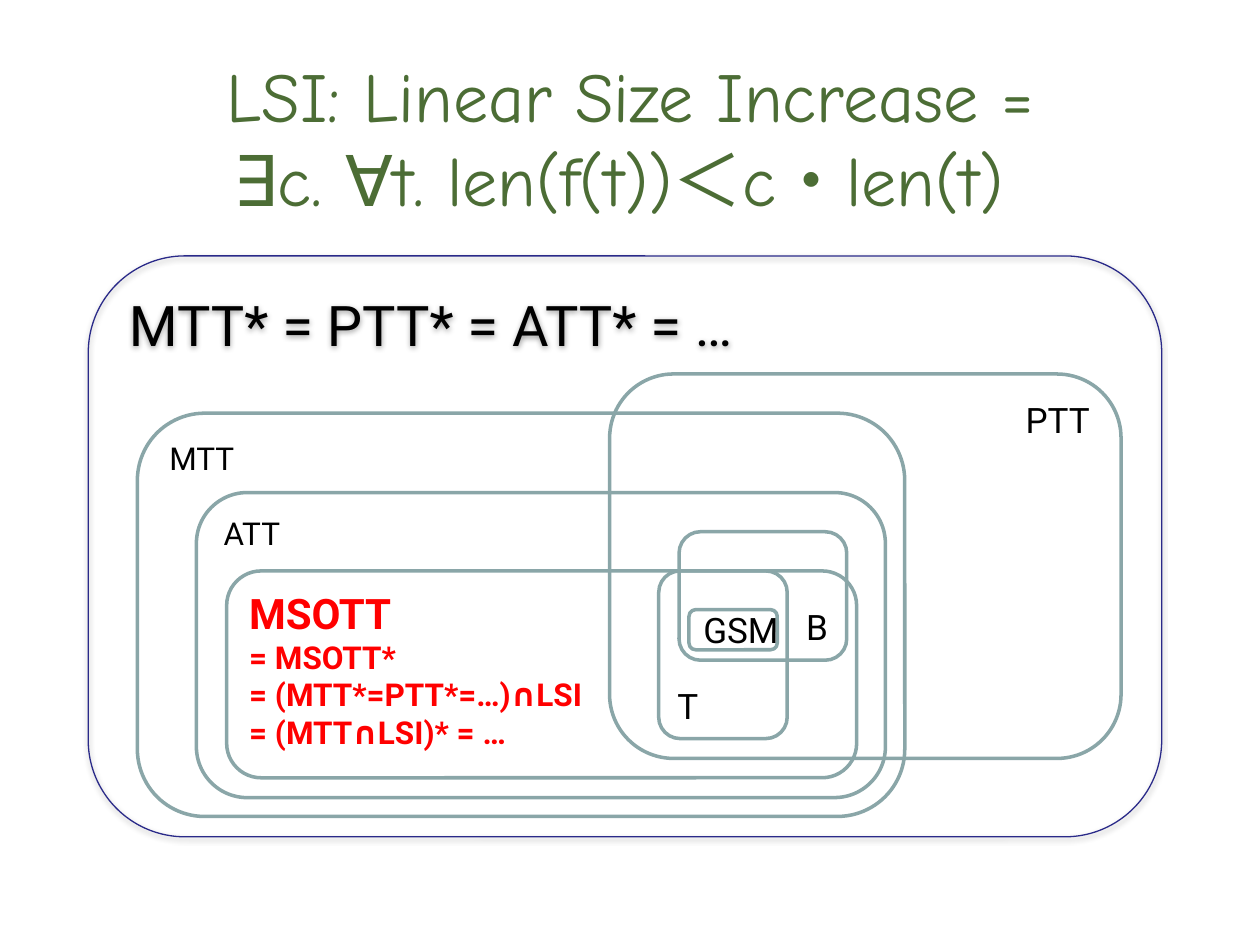
import pptx
import pptx.dml.color
import pptx.enum.shapes
import pptx.enum.text
import pptx.oxml
import pptx.oxml.ns
import pptx.util

Cm = pptx.util.Cm
Pt = pptx.util.Pt
RGBColor = pptx.dml.color.RGBColor
ANCHOR = pptx.enum.text.MSO_ANCHOR
ALIGN = pptx.enum.text.PP_ALIGN

GREEN = RGBColor(0x4C, 0x6D, 0x35)
NAVY = RGBColor(0x2A, 0x2A, 0x89)
TEAL = RGBColor(0x8A, 0xA6, 0xA8)
BLACK = RGBColor(0x00, 0x00, 0x00)
RED = RGBColor(0xFF, 0x00, 0x00)

SHADOW = (
    f'<a:outerShdw {pptx.oxml.ns.nsdecls("a")} blurRad="40000" dist="20000" '
    'dir="5400000" rotWithShape="0"><a:srgbClr val="000000">'
    '<a:alpha val="38000"/></a:srgbClr></a:outerShdw>'
)


class ClassDiagram:
    """Slide of nested sets drawn as rounded boxes."""

    title_font = "Comic Neue"
    body_font = "Roboto"

    def __init__(self, slide):
        self.s = slide

    def format(self, p, name, size, color, bold=False, align=ALIGN.LEFT):
        p.alignment = align
        p.font.name = name
        p.font.size = Pt(size)
        p.font.bold = bold
        p.font.color.rgb = color

    def title(self, text, left, top, width, height):
        sp = self.s.shapes.title
        sp.left, sp.top, sp.width, sp.height = map(Cm, (left, top, width, height))
        tf = sp.text_frame
        tf.auto_size = pptx.enum.text.MSO_AUTO_SIZE.NONE
        tf.vertical_anchor = ANCHOR.MIDDLE
        p = tf.paragraphs[0]
        p.text = text
        self.format(p, self.title_font, 40, GREEN, align=ALIGN.CENTER)

    def box(self, text, at, size, anchor=ANCHOR.TOP, align=ALIGN.LEFT,
            line=TEAL, weight=2, color=BLACK, bold=False, wrap=True):
        sp = self.s.shapes.add_shape(
            pptx.enum.shapes.MSO_SHAPE.ROUNDED_RECTANGLE, *map(Cm, at))
        sp.shadow.inherit = False
        sp.fill.background()
        sp.line.color.rgb = line
        sp.line.width = Pt(weight)
        tf = sp.text_frame
        tf.word_wrap = wrap
        tf.vertical_anchor = anchor
        p = tf.paragraphs[0]
        p.text = text
        self.format(p, self.body_font, size, color, bold, align)
        return sp

    def add_shadow(self, sp):
        effects = sp.element.spPr.find(pptx.oxml.ns.qn("a:effectLst"))
        effects.append(pptx.oxml.parse_xml(SHADOW))


def main():
    prs = pptx.Presentation()
    prs.slide_width, prs.slide_height = Cm(25.4), Cm(19.05)
    d = ClassDiagram(prs.slides.add_slide(prs.slide_layouts[5]))

    # Definition of linear size increase
    d.title("LSI: Linear Size Increase =\v∃c. ∀t. len(f(t))＜c・len(t) ",
            1.63, 1.37, 22.15, 2.77)

    # Outermost class
    outer = d.box("MTT* = PTT* = ATT* = …", (1.78, 5.16, 21.64, 11.71), 32,
                  line=NAVY, weight=0.75)
    d.add_shadow(outer)

    # Classes inside it, from back to front
    d.box("MTT", (2.77, 8.33, 15.47, 8.13), 18)
    d.box("PTT", (12.29, 7.54, 10.31, 7.75), 20, align=ALIGN.RIGHT)
    d.box("ATT", (3.96, 9.93, 13.89, 6.15), 18)
    d.box("T", (13.28, 11.51, 2.59, 3.38), 20, anchor=ANCHOR.BOTTOM)
    d.box("B", (13.69, 10.72, 3.38, 2.59), 20, anchor=ANCHOR.BOTTOM,
          align=ALIGN.RIGHT)

    # Highlighted class with its equalities
    msott = d.box("MSOTT\v= MSOTT*\v= (MTT*=PTT*=…)∩LSI\v= (MTT∩LSI)* = …",
                  (4.57, 11.51, 12.7, 4.17), 18, color=RED, bold=True)
    msott.text_frame.paragraphs[0].runs[0].font.size = Pt(24)

    # Innermost class
    d.box("GSM", (13.89, 12.29, 1.78, 0.81), 20, anchor=ANCHOR.MIDDLE, wrap=False)

    prs.save("out.pptx")


if __name__ == "__main__":
    main()
